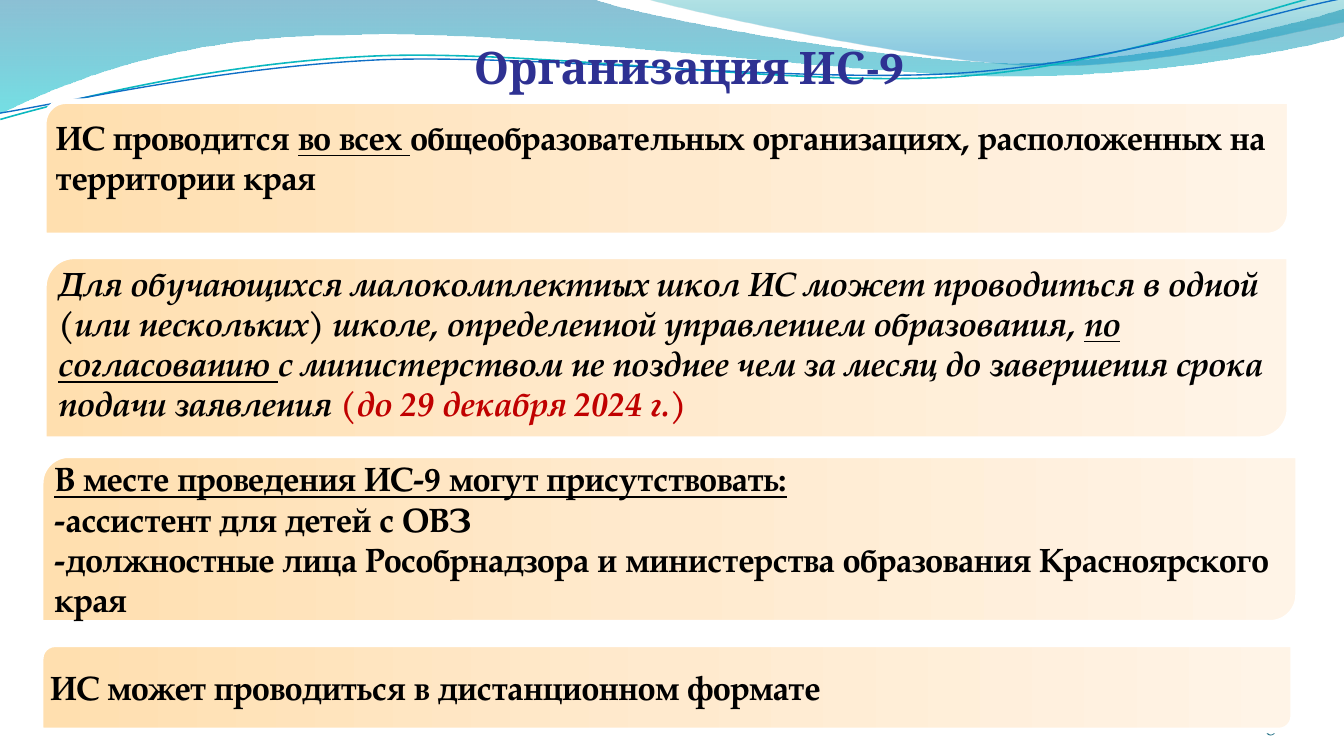
from pptx import Presentation, oxml, util as u
from pptx.dml.color import RGBColor
from pptx.enum import shapes, text
from pptx.oxml import ns

Pt = u.Pt
BODY, HEAD = "TeX Gyre Pagella", "Cambria"
INK, RED, NAVY, TEAL, WHITE = "000000", "C00000", "2E3192", "045D75", "FFFFFF"
SAND = [(0, "FFDFAF", 100), (50, "FFEACE", 100), (100, "FFF4E7", 100)]
TILT = -2.7

# Waves: a pair is a straight step, six numbers are a curve
BANDS = [
    ([(0, 0), (317, -0.5), (343, 9, 478, 34, 546, 34), (614, 34, 690, 14, 720, 5),
      (720.5, 19.5), (708, 24, 626, 41, 537, 41), (446, 40, 275, 15, 185, 19),
      (93, 19, 33, 45, -0.5, 61)],
     [(0, "0074A1", 45), (100, "00C6CF", 55)]),
    ([(345, -0.5), (366, 6, 491, 33, 554, 35), (616, 37, 692, 17, 720, 12), (720, 0)],
     [(0, "00A1A9", 30), (80, "008BBF", 45)]),
]
# Lines are given level and then tilted
LINES = [
    ([(-1, 47), (34, 38.7, 114, 22.4, 199.2, 22.5),
      (285.3, 22.5, 425.2, 50.1, 512.3, 48.2),
      (599.5, 46.3, 676.9, 18.9, 720.3, 11.9)], "0AB8BF", 0.85),
    ([(-0.9, 43.6), (33.3, 39.7, 118.1, 24.6, 204.2, 24.7),
      (290.2, 25.7, 429.3, 48.3, 515.5, 46.4),
      (601.7, 44.4, 678.8, 22, 721.2, 16)], "0F6FC6", 0.75),
]

# Panels: box, bottom inset, paragraphs of (text, style); u underline, i italic, r red
PANELS = [
    ((23.5, 54.2, 667.4, 72), 15, [
        [("ИС проводится ", ""), ("во всех ", "u"),
         ("общеобразовательных организациях, расположенных на территории края", "")]]),
    ((23.5, 137.3, 667.2, 98), 8, [
        [("Для обучающихся малокомплектных школ ИС может проводиться в одной "
          "(или нескольких) школе, определенной управлением образования, ", "i"),
         ("по согласованию ", "iu"),
         ("с министерством не позднее чем за месяц до завершения срока подачи заявления ", "i"),
         ("(до 29 декабря 2024 г.)", "ir")]]),
    ((21.8, 243.9, 673.6, 89.8), 3, [
        [("В месте проведения ИС-9 могут присутствовать:", "u")],
        [("-ассистент для детей с ОВЗ", "")],
        [("-должностные лица Рособрнадзора и министерства образования "
          "Красноярского края", "")]]),
    ((21.8, 345.2, 671, 46.2), 3, [
        [("ИС может проводиться в дистанционном формате", "")]]),
]


def rgb(code):
    return RGBColor.from_string(code)


def shade(shape, stops, angle):
    """Fill with a linear gradient of (place, colour, opacity) in percent."""
    shape.fill.solid()
    old = shape._element.spPr.find(ns.qn("a:solidFill"))
    marks = "".join(
        f'<a:gs pos="{at * 1000}"><a:srgbClr val="{code}">'
        f'<a:alpha val="{alpha * 1000}"/></a:srgbClr></a:gs>'
        for at, code, alpha in stops)
    new = oxml.parse_xml(
        f'<a:gradFill {ns.nsdecls("a")} rotWithShape="1"><a:gsLst>{marks}</a:gsLst>'
        f'<a:lin ang="{angle * 60000}" scaled="0"/></a:gradFill>')
    old.getparent().replace(old, new)


def wave(slide, steps, close):
    """Build the outline from step ends, then bend the curved steps."""
    ends = [(Pt(step[-2]), Pt(step[-1])) for step in steps]
    pen = slide.shapes.build_freeform(*ends[0])
    pen.add_line_segments(ends[1:], close=close)
    shape = pen.convert_to_shape()
    shape.shadow.inherit = False
    sides = list(shape._element.spPr.iter(ns.qn("a:lnTo")))
    for side, step in zip(sides, steps[1:]):
        if len(step) == 6:
            dots = "".join(
                f'<a:pt x="{Pt(x) - shape.left}" y="{Pt(y) - shape.top}"/>'
                for x, y in zip(step[::2], step[1::2]))
            bend = oxml.parse_xml(
                f'<a:cubicBezTo {ns.nsdecls("a")}>{dots}</a:cubicBezTo>')
            side.getparent().replace(side, bend)
    return shape


def style(run, size, face, code, bold=True):
    font = run.font
    font.size, font.name, font.bold = Pt(size), face, bold
    font.color.rgb = rgb(code)


def label(slide, box, words, align, size, face, code, bold):
    frame = slide.shapes.add_textbox(*map(Pt, box)).text_frame
    frame.word_wrap = True
    frame.text = words
    para = frame.paragraphs[0]
    para.alignment = align
    style(para.runs[0], size, face, code, bold)
    return frame


def panel(slide, box, foot, paras):
    shape = slide.shapes.add_shape(
        shapes.MSO_SHAPE.ROUND_2_DIAG_RECTANGLE, *map(Pt, box))
    shape.shadow.inherit = False
    shade(shape, SAND, 0)
    shape.line.color.rgb, shape.line.width = rgb(WHITE), Pt(3)
    frame = shape.text_frame
    frame.word_wrap = True
    frame.vertical_anchor = text.MSO_ANCHOR.MIDDLE
    frame.margin_left = frame.margin_right = frame.margin_top = Pt(3)
    frame.margin_bottom = Pt(foot)
    for k, parts in enumerate(paras):
        para = frame.add_paragraph() if k else frame.paragraphs[0]
        para.alignment = text.PP_ALIGN.LEFT
        for words, look in parts:
            run = para.add_run()
            run.text = words
            style(run, 18, BODY, RED if "r" in look else INK)
            run.font.italic, run.font.underline = "i" in look, "u" in look


def main():
    deck = Presentation()
    deck.slide_width, deck.slide_height = Pt(720), Pt(405)
    slide = deck.slides.add_slide(deck.slide_layouts[6])

    # Wave header
    for steps, stops in BANDS:
        shape = wave(slide, steps, True)
        shade(shape, stops, 90)
        shape.line.fill.background()
    for steps, code, width in LINES:
        shape = wave(slide, steps, False)
        shape.rotation = TILT
        shape.fill.background()
        shape.line.color.rgb, shape.line.width = rgb(code), Pt(width)

    # Page number, partly under the last panel
    frame = label(slide, (624.2, 375.1, 59.8, 21.6), "8", text.PP_ALIGN.RIGHT,
                  12, BODY, TEAL, False)
    frame.vertical_anchor = text.MSO_ANCHOR.BOTTOM
    frame.margin_left = frame.margin_right = 0
    frame.margin_top = frame.margin_bottom = 0

    # Panels and title
    for box, foot, paras in PANELS:
        panel(slide, box, foot, paras)
    label(slide, (198.7, 18, 340.6, 36), "Организация ИС-9", text.PP_ALIGN.CENTER,
          24, HEAD, NAVY, True)

    deck.save("out.pptx")


if __name__ == "__main__":
    main()
